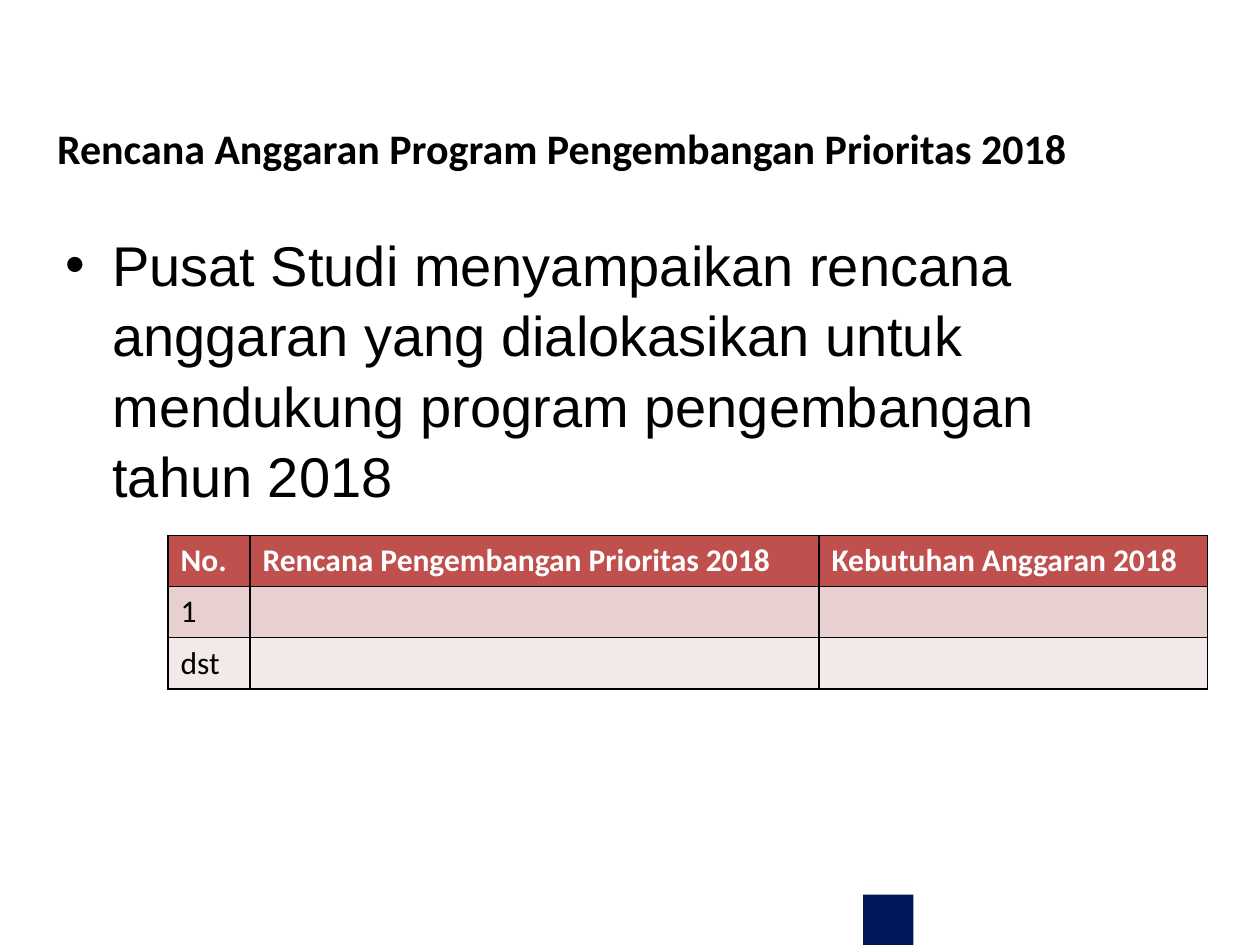
from lxml.etree import SubElement
from pptx import Presentation
from pptx.dml.color import RGBColor
from pptx.enum.shapes import MSO_SHAPE
from pptx.enum.text import MSO_ANCHOR, PP_ALIGN
from pptx.oxml.ns import qn
from pptx.util import Pt

BLACK = RGBColor(0x00, 0x00, 0x00)
WHITE = RGBColor(0xFF, 0xFF, 0xFF)
NAVY = RGBColor(0x02, 0x16, 0x5B)
HEADER_RED = RGBColor(0xC0, 0x50, 0x4D)
BANDS = [RGBColor(0xE8, 0xD0, 0xD0), RGBColor(0xF4, 0xE9, 0xE9)]


class SlideBuilder:
    """Holds the style and the current slide; all lengths are in points."""

    heading_font = "Calibri"
    body_font = "Arial"

    def __init__(self, slide):
        self.slide = slide

    def place(self, shape, left, top, width, height):
        shape.left, shape.top = Pt(left), Pt(top)
        shape.width, shape.height = Pt(width), Pt(height)

    def style(self, paragraph, font_name, size, color, bold=False):
        font = paragraph.font
        font.name, font.size, font.bold = font_name, Pt(size), bold
        font.color.rgb = color

    def title(self, text, *box):
        heading = self.slide.shapes.title
        self.place(heading, *box)
        heading.text_frame.text = text
        heading.text_frame.vertical_anchor = MSO_ANCHOR.TOP
        paragraph = heading.text_frame.paragraphs[0]
        paragraph.alignment = PP_ALIGN.CENTER
        self.style(paragraph, self.heading_font, 24, BLACK, bold=True)

    def bullet(self, text, *box):
        body = self.slide.placeholders[1]
        self.place(body, *box)
        body.text_frame.text = text
        paragraph = body.text_frame.paragraphs[0]
        properties = paragraph._p.get_or_add_pPr()
        properties.set("marL", str(Pt(27)))
        properties.set("indent", str(Pt(-27)))
        SubElement(properties, qn("a:buFont"), typeface=self.body_font)
        SubElement(properties, qn("a:buChar"), char="•")
        paragraph.space_before = Pt(0)
        paragraph.line_spacing = 1.05
        self.style(paragraph, self.body_font, 32, BLACK)

    def square(self, left, top, side, color):
        marker = self.slide.shapes.add_shape(
            MSO_SHAPE.RECTANGLE, Pt(left), Pt(top), Pt(side), Pt(side))
        marker.shadow.inherit = False
        marker.fill.solid()
        marker.fill.fore_color.rgb = color
        marker.line.fill.background()

    def cell_borders(self, cell):
        properties = cell._tc.get_or_add_tcPr()
        for position, side in enumerate(("lnL", "lnR", "lnT", "lnB")):
            line = SubElement(properties, qn(f"a:{side}"), w=str(Pt(1)))
            fill = SubElement(line, qn("a:solidFill"))
            SubElement(fill, qn("a:srgbClr"), val=str(BLACK))
            # Borders precede the fill in the cell properties
            properties.insert(position, line)

    def table(self, rows, left, top, column_widths, row_height):
        grid = self.slide.shapes.add_table(
            len(rows), len(column_widths), Pt(left), Pt(top),
            Pt(sum(column_widths)), Pt(row_height * len(rows))).table
        for column, width in zip(grid.columns, column_widths):
            column.width = Pt(width)
        for r, texts in enumerate(rows):
            grid.rows[r].height = Pt(row_height)
            header = r == 0
            for c, text in enumerate(texts):
                cell = grid.cell(r, c)
                cell.text = text
                cell.fill.solid()
                cell.fill.fore_color.rgb = HEADER_RED if header else BANDS[(r - 1) % 2]
                self.cell_borders(cell)
                self.style(cell.text_frame.paragraphs[0], self.heading_font, 18,
                           WHITE if header else BLACK, bold=header)


def main():
    deck = Presentation()
    deck.slide_width, deck.slide_height = Pt(720), Pt(540)
    builder = SlideBuilder(deck.slides.add_slide(deck.slide_layouts[1]))

    # Footer marker
    builder.square(493.2, 511.2, 28.8, NAVY)

    # Heading and introduction
    builder.title("Rencana Anggaran Program Pengembangan Prioritas 2018",
                  12.24, 66.24, 617.76, 36)
    builder.bullet("Pusat Studi menyampaikan rencana anggaran yang dialokasikan "
                   "untuk mendukung program pengembangan tahun 2018",
                   30, 126, 648, 326)

    # Budget table
    budget = [
        ("No.", "Rencana Pengembangan Prioritas 2018", "Kebutuhan Anggaran 2018"),
        ("1", "", ""),
        ("dst", "", ""),
    ]
    builder.table(budget, 96, 306, [46.8, 325.2, 222], 29.2)

    deck.save("out.pptx")


if __name__ == "__main__":
    main()
